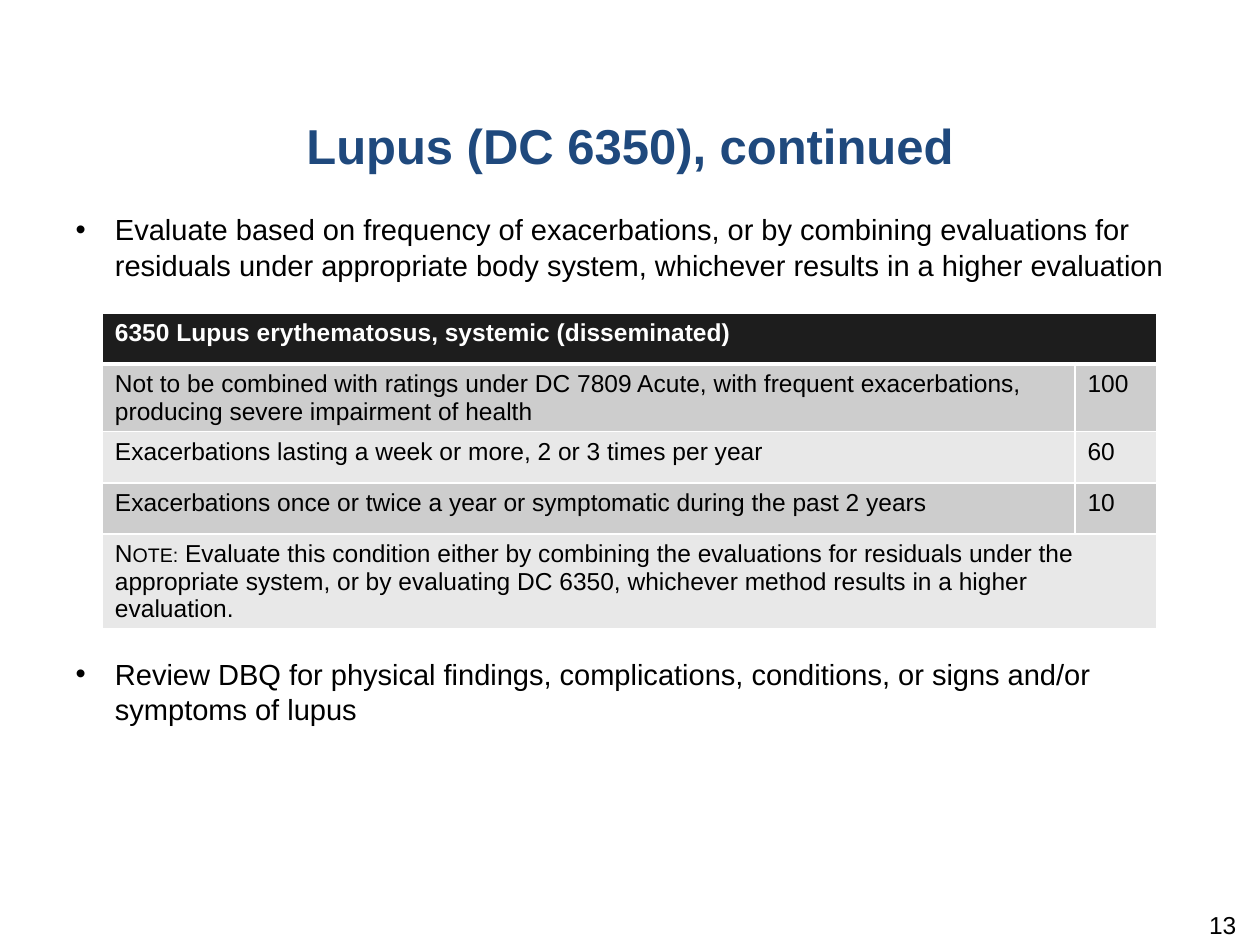
from lxml.etree import SubElement
from pptx import Presentation
from pptx.dml.color import RGBColor
from pptx.enum.text import MSO_ANCHOR as Anchor, MSO_AUTO_SIZE as AutoSize, PP_ALIGN as Align
from pptx.oxml.ns import qn
from pptx.util import Pt


def style(font, size, color="000000", bold=False):
    font.name = "Arial"
    font.size = Pt(size)
    font.bold = bold
    font.color.rgb = RGBColor.from_string(color)


def add_borders(cell, bottom, top):
    """White cell borders; they must stand before the fill."""
    props = cell._tc.get_or_add_tcPr()
    widths = {"a:lnL": 1, "a:lnR": 1, "a:lnT": top, "a:lnB": bottom}
    for index, (tag, width) in enumerate(widths.items()):
        line = SubElement(props, qn(tag), w=str(Pt(width)))
        fill = SubElement(line, qn("a:solidFill"))
        SubElement(fill, qn("a:srgbClr"), val="FFFFFF")
        props.insert(index, line)


deck = Presentation()
deck.slide_width, deck.slide_height = Pt(720), Pt(540)
page = deck.slides.add_slide(deck.slide_layouts[1])

# Title
title = page.shapes.title
title.left, title.top, title.width, title.height = Pt(0), Pt(62.6), Pt(720), Pt(85.7)
frame = title.text_frame
frame.text = "Lupus (DC 6350), continued"
frame.auto_size = AutoSize.NONE
frame.vertical_anchor = Anchor.TOP
frame.paragraphs[0].alignment = Align.CENTER
style(frame.paragraphs[0].font, 28, "1F497D", True)

# Bullets above and below the table
body = page.placeholders[1]
body.left, body.top, body.width, body.height = Pt(36), Pt(117.4), Pt(648), Pt(308)
frame = body.text_frame
frame.text = (
    "Evaluate based on frequency of exacerbations, or by combining evaluations for "
    "residuals under appropriate body system, whichever results in a higher evaluation\n"
    "Review DBQ for physical findings, complications, conditions, or signs and/or "
    "symptoms of lupus"
)
frame.auto_size = AutoSize.NONE
frame.vertical_anchor = Anchor.TOP
for para, space_before in zip(frame.paragraphs, (0, 207.7)):
    props = para._p.get_or_add_pPr()
    props.set("marL", str(Pt(22.5)))
    props.set("indent", str(-Pt(22.5)))
    SubElement(props, qn("a:buChar"), char="•")
    para.line_spacing = Pt(20)
    para.space_before = Pt(space_before)
    para.space_after = Pt(6)
    style(para.font, 16.6)

# Rating table: text, rating (None where the text spans both columns)
rows = [
    ("6350 Lupus erythematosus, systemic (disseminated)", None),
    ("Not to be combined with ratings under DC 7809 Acute, with frequent exacerbations, "
     "producing severe impairment of health", "100"),
    ("Exacerbations lasting a week or more, 2 or 3 times per year", "60"),
    ("Exacerbations once or twice a year or symptomatic during the past 2 years", "10"),
    (" Evaluate this condition either by combining the evaluations for residuals under the "
     "appropriate system, or by evaluating DC 6350, whichever method results in a higher "
     "evaluation.", None),
]
table = page.shapes.add_table(
    len(rows), 2, Pt(58.5), Pt(178.8), Pt(602.6), Pt(29.2 * len(rows))).table
table.columns[0].width, table.columns[1].width = Pt(555.8), Pt(46.8)
for row, (text, rating) in enumerate(rows):
    header = row == 0
    band = "1D1D1D" if header else ("E8E8E8", "CDCDCD")[row % 2]
    if rating is None:
        table.cell(row, 0).merge(table.cell(row, 1))
    for column, content in enumerate((text, rating)):
        cell = table.cell(row, column)
        cell.fill.solid()
        cell.fill.fore_color.rgb = RGBColor.from_string(band)
        add_borders(cell, bottom=3 if header else 1, top=3 if row == 1 else 1)
        if content is None:
            continue
        para = cell.text_frame.paragraphs[0]
        if row == len(rows) - 1:
            span = para.add_run()
            span.text = "Note:"
            span.font._element.set("cap", "small")
        para.add_run().text = content
        style(para.font, 14, "FFFFFF" if header else "000000", header)

# Page number
box = page.shapes.add_textbox(Pt(545.8), Pt(519.8), Pt(167.8), Pt(28.8))
frame = box.text_frame
frame.word_wrap = True
frame.margin_top = 0
para = frame.paragraphs[0]
para.text = "13"
para.alignment = Align.RIGHT
style(para.font, 14)

deck.save("out.pptx")
